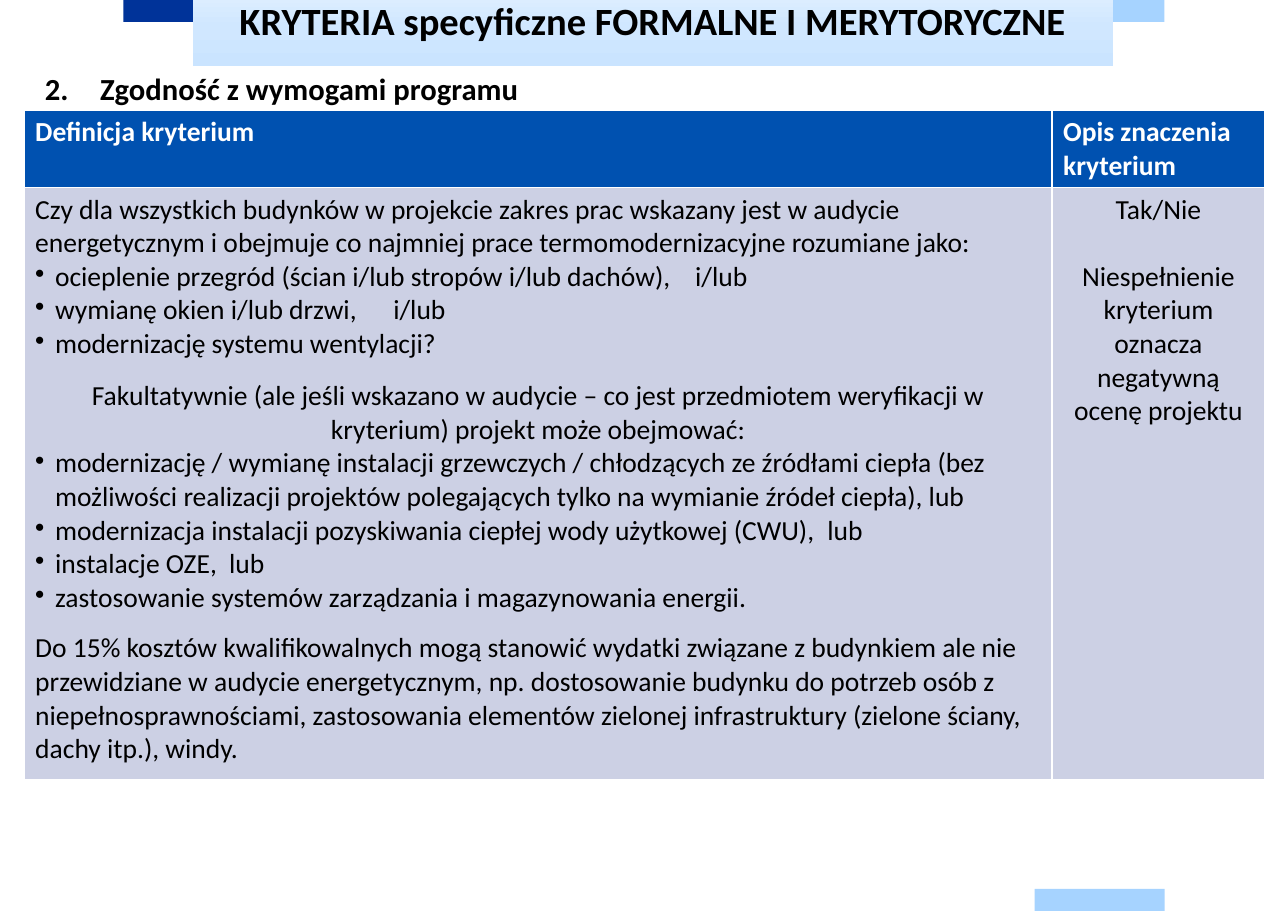
from dataclasses import dataclass
from typing import Any, Optional

from pptx import Presentation
from pptx.dml.color import RGBColor
from pptx.enum.shapes import MSO_SHAPE as Shape
from pptx.enum.text import MSO_ANCHOR as Anchor, MSO_AUTO_SIZE as AutoSize, PP_ALIGN as Align
from pptx.oxml import parse_xml
from pptx.oxml.ns import nsdecls
from pptx.util import Inches, Pt

WIDTH, HEIGHT = Inches(11.69), Inches(8.27)
BLACK, WHITE, NAVY, SKY = "000000", "FFFFFF", "003399", "A6D3FF"
HEADER_FILL, BODY_FILL = "0051B0", "CCD0E4"
TITLE_STOPS = {0: "E1F0FF", 50: "D0E7FF", 100: "CAE4FF"}
COLUMN_SHARES, ROW_SHARES = (79.81, 16.51), (8.34, 65.05)
BULLET_INDENT = 0.18


@dataclass(frozen=True)
class Area:
    left: float
    top: float
    width: float
    height: float

    def box(self) -> tuple[int, int, int, int]:
        return across(self.left), down(self.top), across(self.width), down(self.height)


@dataclass(frozen=True)
class Bar:
    area: Area
    fill: str


@dataclass(frozen=True)
class Line:
    text: str
    bullet: bool = False
    centered: bool = False
    space_before: float = 0
    tab: Optional[float] = None


@dataclass(frozen=True)
class Cell:
    lines: tuple[Line, ...]
    fill: str
    color: str
    bold: bool


BARS = (
    Bar(Area(9.58, 0, 10.09, 2.42), NAVY),
    Bar(Area(19.67, 0, 70.74, 2.42), SKY),
    Bar(Area(80.33, 97.58, 10.09, 2.42), SKY),
)
TITLE_AREA = Area(14.97, -1.33, 71.43, 8.59)
HEADING_AREA = Area(2.65, 7.13, 88.88, 5.4)
TABLE_AREA = Area(1.88, 12.09, sum(COLUMN_SHARES), sum(ROW_SHARES))

DEFINITION = (
    Line("Czy dla wszystkich budynków w projekcie zakres prac wskazany jest w audycie energetycznym "
         "i obejmuje co najmniej prace termomodernizacyjne rozumiane jako:"),
    Line("ocieplenie przegród (ścian i/lub stropów i/lub dachów),\ti/lub", bullet=True, tab=5.99),
    Line("wymianę okien i/lub drzwi,\ti/lub", bullet=True, tab=3.25),
    Line("modernizację systemu wentylacji?", bullet=True),
    Line("Fakultatywnie (ale jeśli wskazano w audycie – co jest przedmiotem weryfikacji w kryterium) "
         "projekt może obejmować:", centered=True, space_before=12.2),
    Line("modernizację / wymianę instalacji grzewczych / chłodzących ze źródłami ciepła (bez możliwości "
         "realizacji projektów polegających tylko na wymianie źródeł ciepła), lub", bullet=True),
    Line("modernizacja instalacji pozyskiwania ciepłej wody użytkowej (CWU),\tlub", bullet=True, tab=7.19),
    Line("instalacje OZE,\tlub", bullet=True, tab=1.76),
    Line("zastosowanie systemów zarządzania i magazynowania energii.", bullet=True),
    Line("Do 15% kosztów kwalifikowalnych mogą stanowić wydatki związane z budynkiem ale nie przewidziane "
         "w audycie energetycznym, np. dostosowanie budynku do potrzeb osób z niepełnosprawnościami, "
         "zastosowania elementów zielonej infrastruktury (zielone ściany, dachy itp.), windy.",
         space_before=11),
)
MEANING = (
    Line("Tak/Nie", centered=True),
    Line("Niespełnienie kryterium oznacza negatywną ocenę projektu", centered=True, space_before=22),
)
ROWS = (
    (Cell((Line("Definicja kryterium"),), HEADER_FILL, WHITE, True),
     Cell((Line("Opis znaczenia kryterium"),), HEADER_FILL, WHITE, True)),
    (Cell(DEFINITION, BODY_FILL, BLACK, False),
     Cell(MEANING, BODY_FILL, BLACK, False)),
)


def across(share: float) -> int:
    return round(WIDTH * share / 100)


def down(share: float) -> int:
    return round(HEIGHT * share / 100)


def color_of(value: str) -> RGBColor:
    return RGBColor.from_string(value)


def apply(target: Any, values: dict[str, Any]) -> None:
    for name, value in values.items():
        setattr(target, name, value)


def place(shape: Any, area: Area) -> None:
    apply(shape, dict(zip(("left", "top", "width", "height"), area.box())))


def format_font(paragraph: Any, size: float, color: str, bold: bool) -> None:
    for run in paragraph.runs:
        apply(run.font, {"name": "Calibri", "size": Pt(size), "bold": bold})
        run.font.color.rgb = color_of(color)


def hang(paragraph: Any, indent: float) -> Any:
    properties = paragraph._p.get_or_add_pPr()
    properties.set("marL", str(Inches(indent)))
    properties.set("indent", str(-Inches(indent)))
    return properties


def add_bar(slide: Any, bar: Bar) -> None:
    shape = slide.shapes.add_shape(Shape.RECTANGLE, *bar.area.box())
    shape.shadow.inherit = False
    shape.fill.solid()
    shape.fill.fore_color.rgb = color_of(bar.fill)
    shape.line.fill.background()


def add_title(slide: Any, text: str) -> None:
    title = slide.shapes.title
    place(title, TITLE_AREA)
    stops = "".join(f'<a:gs pos="{position * 1000}"><a:srgbClr val="{color}"/></a:gs>'
                    for position, color in TITLE_STOPS.items())
    title.element.spPr.append(parse_xml(
        f'<a:gradFill {nsdecls("a")}><a:gsLst>{stops}</a:gsLst><a:lin ang="5400000" scaled="0"/></a:gradFill>'))
    frame = title.text_frame
    apply(frame, {"margin_left": 0, "margin_top": 0, "margin_right": 0, "margin_bottom": 0,
                  "vertical_anchor": Anchor.TOP, "auto_size": AutoSize.NONE, "word_wrap": True})
    paragraph = frame.paragraphs[0]
    apply(paragraph, {"text": text, "alignment": Align.CENTER, "line_spacing": Pt(36)})
    format_font(paragraph, 25.2, BLACK, True)
    title.element.getparent().append(title.element)


def add_heading(slide: Any, text: str, number: int) -> None:
    frame = slide.shapes.add_textbox(*HEADING_AREA.box()).text_frame
    frame.word_wrap = True
    paragraph = frame.paragraphs[0]
    hang(paragraph, 0.5).append(parse_xml(
        f'<a:buAutoNum {nsdecls("a")} type="arabicPeriod" startAt="{number}"/>'))
    paragraph.text = text
    format_font(paragraph, 20, BLACK, True)


def write_line(paragraph: Any, line: Line, cell: Cell) -> None:
    if line.bullet:
        hang(paragraph, BULLET_INDENT).append(parse_xml(f'<a:buChar {nsdecls("a")} char="•"/>'))
    if line.tab:
        paragraph._p.get_or_add_pPr().append(parse_xml(
            f'<a:tabLst {nsdecls("a")}><a:tab pos="{Inches(line.tab)}" algn="l"/></a:tabLst>'))
    paragraph.alignment = Align.CENTER if line.centered else Align.LEFT
    if line.space_before:
        paragraph.space_before = Pt(line.space_before)
    paragraph.text = line.text
    format_font(paragraph, 18, cell.color, cell.bold)


def add_criteria_table(slide: Any) -> None:
    table = slide.shapes.add_table(len(ROWS), len(COLUMN_SHARES), *TABLE_AREA.box()).table
    for column, share in zip(table.columns, COLUMN_SHARES):
        column.width = across(share)
    for row, share, cells in zip(table.rows, ROW_SHARES, ROWS):
        row.height = down(share)
        for table_cell, cell in zip(row.cells, cells):
            table_cell.fill.solid()
            table_cell.fill.fore_color.rgb = color_of(cell.fill)
            frame = table_cell.text_frame
            for index, line in enumerate(cell.lines):
                write_line(frame.add_paragraph() if index else frame.paragraphs[0], line, cell)


def main() -> None:
    presentation = Presentation()
    apply(presentation, {"slide_width": WIDTH, "slide_height": HEIGHT})
    slide = presentation.slides.add_slide(presentation.slide_layouts.get_by_name("Title Only"))
    for bar in BARS:
        add_bar(slide, bar)
    add_title(slide, "KRYTERIA specyficzne FORMALNE I MERYTORYCZNE")
    add_heading(slide, "Zgodność z wymogami programu", 2)
    add_criteria_table(slide)
    presentation.save("out.pptx")


if __name__ == "__main__":
    main()
